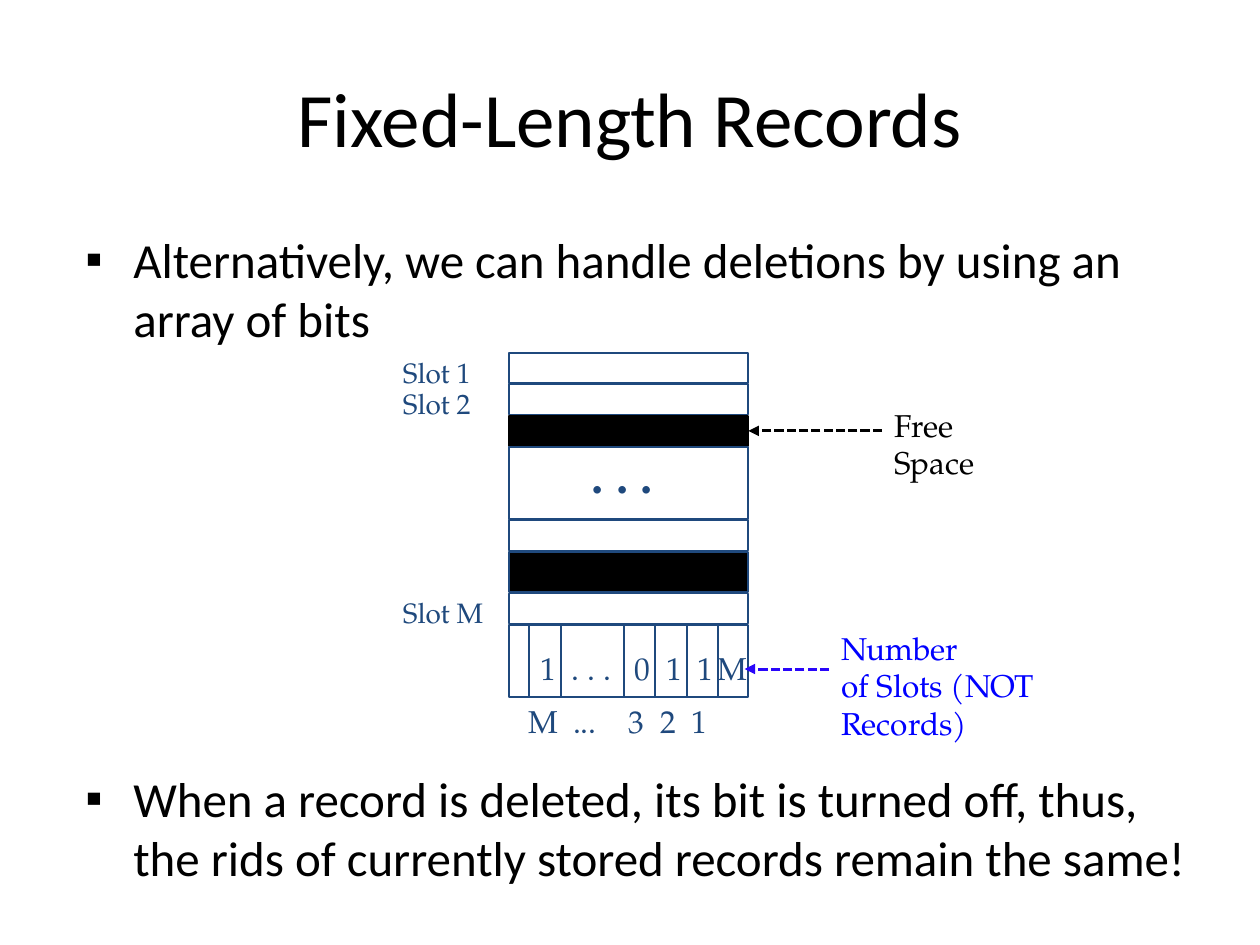
from lxml.etree import SubElement
from pptx import Presentation
from pptx.dml.color import RGBColor as RGB
from pptx.enum.dml import MSO_LINE
from pptx.enum.shapes import MSO_CONNECTOR, MSO_SHAPE
from pptx.enum.text import MSO_ANCHOR, PP_ALIGN
from pptx.oxml.ns import qn
from pptx.util import Inches, Pt

THEME = {
    "navy": RGB.from_string("1F497D"), "black": RGB.from_string("000000"),
    "blue": RGB.from_string("0000FF"), "pointer": RGB.from_string("2906FA"),
    "sans": "Calibri", "serif": "TeX Gyre Pagella",
    "title": 44, "body": 28, "label": 18, "slot": 16,
    "thin": 1, "dash": 1.75,
}

deck = Presentation()
deck.slide_width, deck.slide_height = Inches(10), Inches(7.5)
page = deck.slides.add_slide(deck.slide_layouts[5])


def add_label(text, left, top, width, height, size="label", color="navy",
              face="serif", bold=False):
    box = page.shapes.add_textbox(*map(Inches, (left, top, width, height)))
    box.text_frame.word_wrap = True
    box.text_frame.text = text
    for para in box.text_frame.paragraphs:
        font = para.font
        font.name, font.size, font.bold = THEME[face], Pt(THEME[size]), bold
        font.color.rgb = THEME[color]
    return box


def add_rule(start, end, color="navy", width="thin"):
    """Draw a straight line between two points, without a shadow."""
    rule = page.shapes.add_connector(
        MSO_CONNECTOR.STRAIGHT, *map(Inches, (*start, *end)))
    rule.line.color.rgb, rule.line.width = THEME[color], Pt(THEME[width])
    SubElement(rule._element.spPr, qn("a:effectLst"))
    return rule


# Title and bullets
title = page.shapes.title
title.left, title.top, title.width, title.height = map(Inches, (0.5, 0.3, 9, 1.25))
title.text_frame.text = "Fixed-Length Records"
title.text_frame.vertical_anchor = MSO_ANCHOR.MIDDLE
para = title.text_frame.paragraphs[0]
para.alignment = PP_ALIGN.CENTER
para.font.name, para.font.size = THEME["sans"], Pt(THEME["title"])
para.font.color.rgb = THEME["black"]

bullets = add_label(
    "Alternatively, we can handle deletions by using an array of bits\n"
    "When a record is deleted, its bit is turned off, thus, "
    "the rids of currently stored records remain the same!",
    0.58, 1.77, 9.08, 5.7, "body", "black", "sans")
for para in bullets.text_frame.paragraphs:
    props = para._p.get_or_add_pPr()
    props.set("marL", str(Inches(0.38)))
    props.set("indent", str(-Inches(0.38)))
    SubElement(props, qn("a:buFont")).set("typeface", "Arial")
    SubElement(props, qn("a:buChar")).set("char", "▪")
    # Bullet properties come before the default run properties
    props.append(props.find(qn("a:defRPr")))
para.space_before = Pt(241)  # room for the diagram

# Page of slots: rows stacked with an equal gap
LEFT, WIDTH, GAP, SLOT = 4.04, 1.9, 0.01, 0.24
rows = [  # name, height, fill, line
    ("Slot 1", SLOT, None, "navy"),
    ("Slot 2", SLOT, None, "navy"),
    ("free", SLOT, "black", "black"),
    ("more", 0.57, None, "navy"),
    ("slot", SLOT, None, "navy"),
    ("free too", 0.32, "black", "navy"),
    ("Slot M", SLOT, None, "navy"),
    ("bits", 0.57, None, "navy"),
]
row_shapes, row_tops = {}, {}
top = 2.8
for name, height, fill, line in rows:
    row = page.shapes.add_shape(
        MSO_SHAPE.RECTANGLE, *map(Inches, (LEFT, top, WIDTH, height)))
    row.shadow.inherit = False
    if fill:
        row.fill.solid()
        row.fill.fore_color.rgb = THEME[fill]
    else:
        row.fill.background()
    row.line.color.rgb, row.line.width = THEME[line], Pt(THEME["thin"])
    row_shapes[name], row_tops[name] = row, top
    if name.startswith("Slot"):
        add_label(name, 3.1, top - 0.03, 0.9, 0.37, "slot")
    top += height + GAP
add_label(". . .", 4.6, row_tops["more"] - 0.07, 0.8, 0.56, "body", bold=True)

# Bit array: columns of equal width, the dots taking two
FIRST, COLUMN = 4.2, 0.25
bits_top, bits_bottom = row_tops["bits"], top - GAP
for column, bit in [(0, "1"), (1, ". . ."), (3, "0"), (4, "1"), (5, "1"), (6, "M")]:
    x = FIRST + column * COLUMN
    add_rule((x, bits_top), (x, bits_bottom))
    nudge = 0.1 if bit == "M" else 0.01
    add_label(bit, x - nudge, bits_top + 0.14, 0.6, 0.4)

numbers = add_label("M\t...\t3\t2\t1", FIRST - 0.1, bits_bottom - 0.01, 1.8, 0.4)
props = numbers.text_frame.paragraphs[0]._p.get_or_add_pPr()
stops = SubElement(props, qn("a:tabLst"))
for position in (0.35, 0.79, 1.04, 1.29):
    stop = SubElement(stops, qn("a:tab"))
    stop.set("pos", str(Inches(position)))
    stop.set("algn", "l")
props.append(props.find(qn("a:defRPr")))

# Callouts with dashed pointers
free_label = add_label("Free\nSpace", 7, 3.17, 0.9, 0.5, color="black")
count_label = add_label("Number\nof Slots (NOT Records)", 6.58, 4.94, 2, 0.74,
                        color="blue")
free_pointer = add_rule((7, 3.42), (LEFT + WIDTH, 3.42), "black", "dash")
free_pointer.end_connect(row_shapes["free"], 3)
count_pointer = add_rule((6.58, 5.31), (5.91, 5.31), "pointer", "dash")
for pointer, label in ((free_pointer, free_label), (count_pointer, count_label)):
    pointer.begin_connect(label, 1)
    pointer.line.dash_style = MSO_LINE.SQUARE_DOT
    SubElement(pointer.line._get_or_add_ln(), qn("a:tailEnd")).set("type", "triangle")

deck.save("out.pptx")
